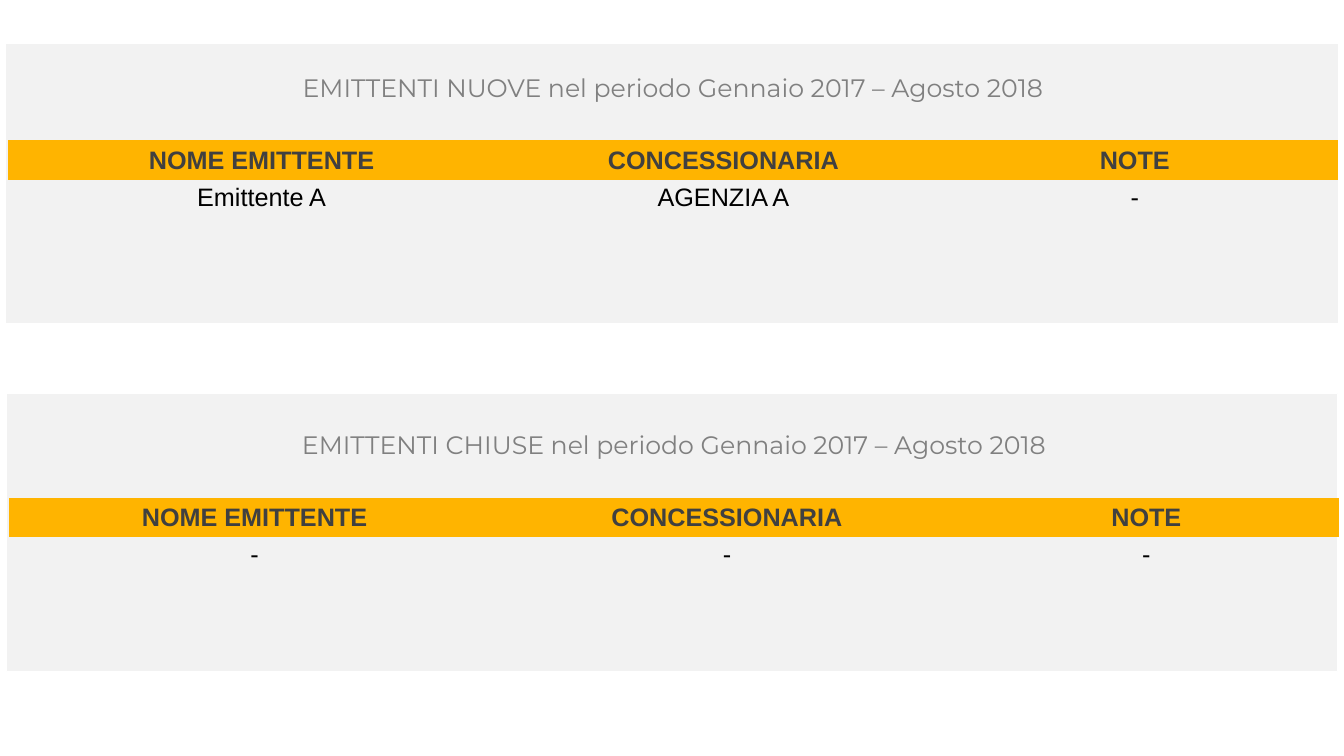
from dataclasses import dataclass

from pptx import Presentation
from pptx.dml.color import RGBColor
from pptx.enum.shapes import MSO_SHAPE
from pptx.enum.text import MSO_ANCHOR, PP_ALIGN
from pptx.oxml.ns import qn
from pptx.util import Inches, Pt

RECTANGLE = MSO_SHAPE.RECTANGLE
TOP, MIDDLE = MSO_ANCHOR.TOP, MSO_ANCHOR.MIDDLE
CENTER = PP_ALIGN.CENTER
NO_STYLE = "{2D5ABB26-0587-4C30-8999-92F81FD0307C}"

SLIDE_WIDTH, SLIDE_HEIGHT = 13.33, 7.5
PANEL_WIDTH, PANEL_HEIGHT = 13.21, 2.76
PANEL_LEFT = (SLIDE_WIDTH - PANEL_WIDTH) / 2
TABLE_WIDTH = 13.19
HEADERS = ["NOME EMITTENTE", "CONCESSIONARIA", "NOTE"]


@dataclass(frozen=True)
class Theme:
    panel: str = "F2F2F2"
    white: str = "FFFFFF"
    header: str = "FFB400"
    title_text: str = "808080"
    header_text: str = "404040"
    body_text: str = "000000"
    title_font: str = "Montserrat"
    body_font: str = "Arial"
    size: int = 18
    line: float = 0.75


THEME = Theme()


def color(value):
    return RGBColor.from_string(value)


def write_text(cell, text, font=THEME.body_font, text_color=THEME.body_text,
               bold=False, anchor=MIDDLE):
    cell.vertical_anchor = anchor
    paragraph = cell.text_frame.paragraphs[0]
    paragraph.alignment = CENTER
    run = paragraph.add_run()
    run.text = text
    run.font.name = font
    run.font.size = Pt(THEME.size)
    run.font.bold = bold
    run.font.color.rgb = color(text_color)


def add_panel(slide, left, top, line_color):
    panel = slide.shapes.add_shape(RECTANGLE, Inches(left), Inches(top),
                                   Inches(PANEL_WIDTH), Inches(PANEL_HEIGHT))
    panel.shadow.inherit = False
    panel.fill.solid()
    panel.fill.fore_color.rgb = color(THEME.panel)
    panel.line.color.rgb = color(line_color)
    panel.line.width = Pt(THEME.line)


def add_station_table(slide, left, top, title, values, columns, rows):
    frame = slide.shapes.add_table(len(rows), len(columns), Inches(left), Inches(top),
                                   Inches(TABLE_WIDTH), Inches(sum(rows)))
    table = frame.table
    table.first_row = table.horz_banding = False
    table._tbl.tblPr.find(qn("a:tableStyleId")).text = NO_STYLE
    for column, width in zip(table.columns, columns):
        column.width = Inches(width)
    for row, height in zip(table.rows, rows):
        row.height = Inches(height)
    for cell in table.iter_cells():
        cell.fill.background()
        cell.margin_top = cell.margin_bottom = 0

    title_cell = table.cell(0, 0)
    title_cell.merge(table.cell(0, len(columns) - 1))
    title_cell.margin_top = Inches(0.05)
    write_text(title_cell, title, font=THEME.title_font,
               text_color=THEME.title_text, anchor=TOP)
    for index, (header, value) in enumerate(zip(HEADERS, values)):
        header_cell = table.cell(1, index)
        header_cell.fill.solid()
        header_cell.fill.fore_color.rgb = color(THEME.header)
        write_text(header_cell, header, text_color=THEME.header_text, bold=True)
        write_text(table.cell(2, index), value)


def add_section(slide, left, top, line_color, offset, **table_content):
    add_panel(slide, left, top, line_color)
    add_station_table(slide, left + offset[0], top + offset[1], **table_content)


def main():
    presentation = Presentation()
    presentation.slide_width = Inches(SLIDE_WIDTH)
    presentation.slide_height = Inches(SLIDE_HEIGHT)
    slide = presentation.slides.add_slide(presentation.slide_layouts[6])
    add_section(slide, PANEL_LEFT, 0.44, THEME.panel, (0.02, 0.24),
                title="EMITTENTI NUOVE nel periodo Gennaio 2017 – Agosto 2018",
                values=["Emittente A", "AGENZIA A", "-"],
                columns=[5.03, 4.13, 4.03],
                rows=[0.71, 0.4, 0.34, 0.34, 0.34])
    add_section(slide, PANEL_LEFT, 3.9, THEME.white, (0.03, 0.32),
                title="EMITTENTI CHIUSE nel periodo Gennaio 2017 – Agosto 2018",
                values=["-", "-", "-"],
                columns=[4.87, 4.5, 3.82],
                rows=[0.72, 0.39, 0.35, 0.41, 0.41])
    presentation.save("out.pptx")


if __name__ == "__main__":
    main()
